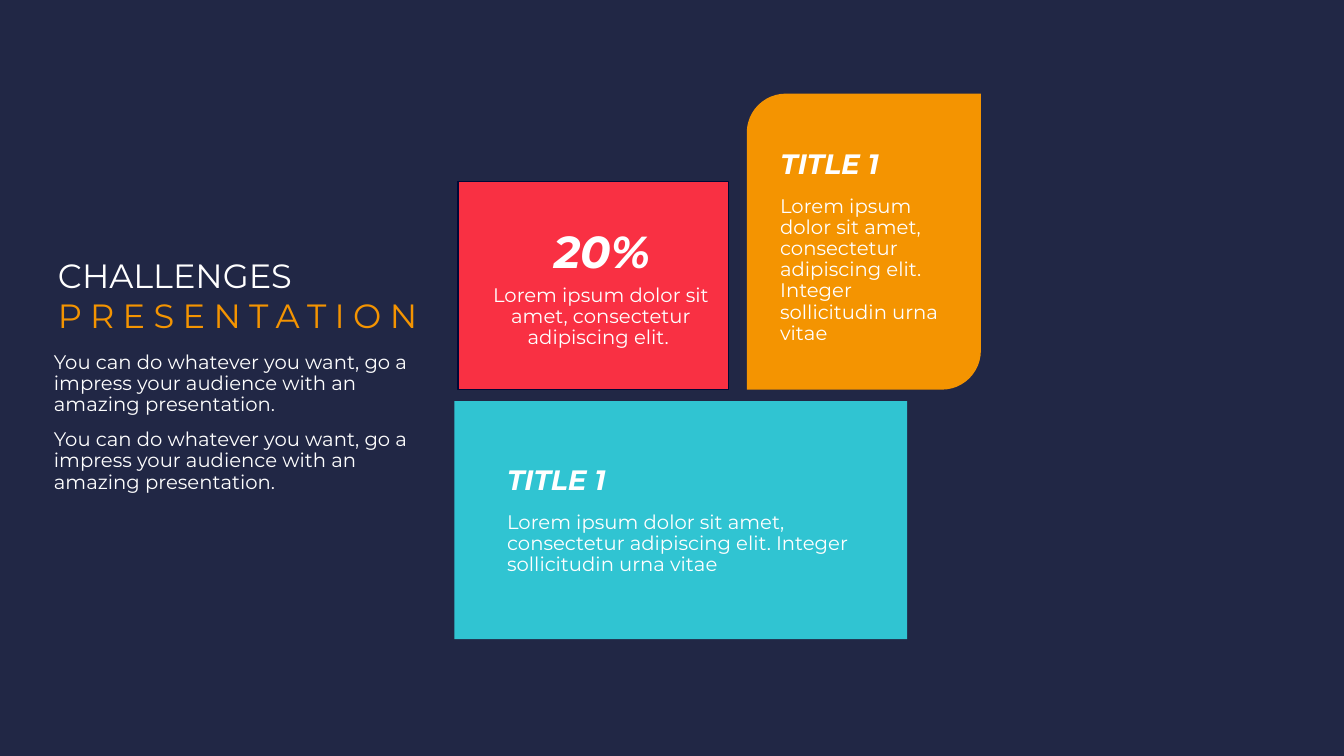
from pptx import Presentation
from pptx.dml.color import RGBColor
from pptx.enum.shapes import MSO_SHAPE
from pptx.enum.text import PP_ALIGN
from pptx.util import Cm, Pt

NAVY = RGBColor(0x21, 0x27, 0x45)
ORANGE = RGBColor(0xF4, 0x94, 0x01)
TURQUOISE = RGBColor(0x30, 0xC4, 0xD2)
RED = RGBColor(0xF9, 0x30, 0x43)
OUTLINE = RGBColor(0x00, 0x08, 0x36)
WHITE = RGBColor(0xFF, 0xFF, 0xFF)

LOREM = "Lorem ipsum dolor sit amet, consectetur adipiscing elit. "
LONG_LOREM = LOREM + "Integer sollicitudin urna vitae"
INTRO = "You can do whatever you want, go a impress your audience with an amazing presentation."

deck = Presentation()
deck.slide_width, deck.slide_height = Cm(33.87), Cm(19.05)
page = deck.slides.add_slide(deck.slide_layouts[6])
page.background.fill.solid()
page.background.fill.fore_color.rgb = NAVY


def add_paragraph(frame, text, size=14, color=WHITE, bold=False, italic=False,
                  align=PP_ALIGN.LEFT, line_spacing=0.9, space_before=10, tracking=None):
    first = not frame.text
    paragraph = frame.paragraphs[0] if first else frame.add_paragraph()
    paragraph.alignment = align
    paragraph.line_spacing = line_spacing
    paragraph.space_before = Pt(0 if first else space_before)
    span = paragraph.add_run()
    span.text = text
    span.font.name = "Montserrat"
    span.font.size = Pt(size)
    span.font.bold = bold
    span.font.italic = italic
    span.font.color.rgb = color
    if tracking:
        span.font._element.set("spc", str(tracking * 100))


def add_frame(left, top, width, height):
    box = page.shapes.add_textbox(Cm(left), Cm(top), Cm(width), Cm(height))
    box.text_frame.word_wrap = True
    return box.text_frame


cards = [
    (MSO_SHAPE.ROUND_2_DIAG_RECTANGLE, 18.82, 2.36, 5.9, 7.46, ORANGE, None),
    (MSO_SHAPE.RECTANGLE, 11.45, 10.11, 11.41, 6, TURQUOISE, None),
    (MSO_SHAPE.RECTANGLE, 11.54, 4.57, 6.82, 5.24, RED, OUTLINE),
]
for outline, left, top, width, height, fill, line in cards:
    card = page.shapes.add_shape(outline, Cm(left), Cm(top), Cm(width), Cm(height))
    card.shadow.inherit = False
    card.fill.solid()
    card.fill.fore_color.rgb = fill
    if line:
        card.line.color.rgb = line
        card.line.width = Pt(1)
    else:
        card.line.fill.background()

heading = {"size": 20, "bold": True, "italic": True}
figure = {**heading, "size": 32, "align": PP_ALIGN.CENTER}
card_texts = [
    (19.41, 4.82, 4.7, 3.35, LONG_LOREM, {}),
    (19.42, 3.67, 5.28, 0.97, "TITLE 1", heading),
    (12.53, 12.78, 9.53, 2.11, LONG_LOREM, {}),
    (12.53, 11.63, 9.02, 0.97, "TITLE 1", heading),
    (12.53, 5.66, 5.28, 0.97, "20%", figure),
    (11.88, 7.06, 6.53, 1.57, LOREM, {"align": PP_ALIGN.CENTER}),
]
for left, top, width, height, text, style in card_texts:
    add_paragraph(add_frame(left, top, width, height), text, **style)

title = add_frame(1.21, 6.3, 10.34, 2.31)
title_style = {"size": 24, "line_spacing": 1, "space_before": 0}
add_paragraph(title, "CHALLENGES", **title_style)
add_paragraph(title, "PRESENTATION", color=ORANGE, tracking=6, **title_style)

intro = add_frame(1.11, 8.75, 9.6, 4.98)
for _ in range(2):
    add_paragraph(intro, INTRO)

deck.save("out.pptx")
